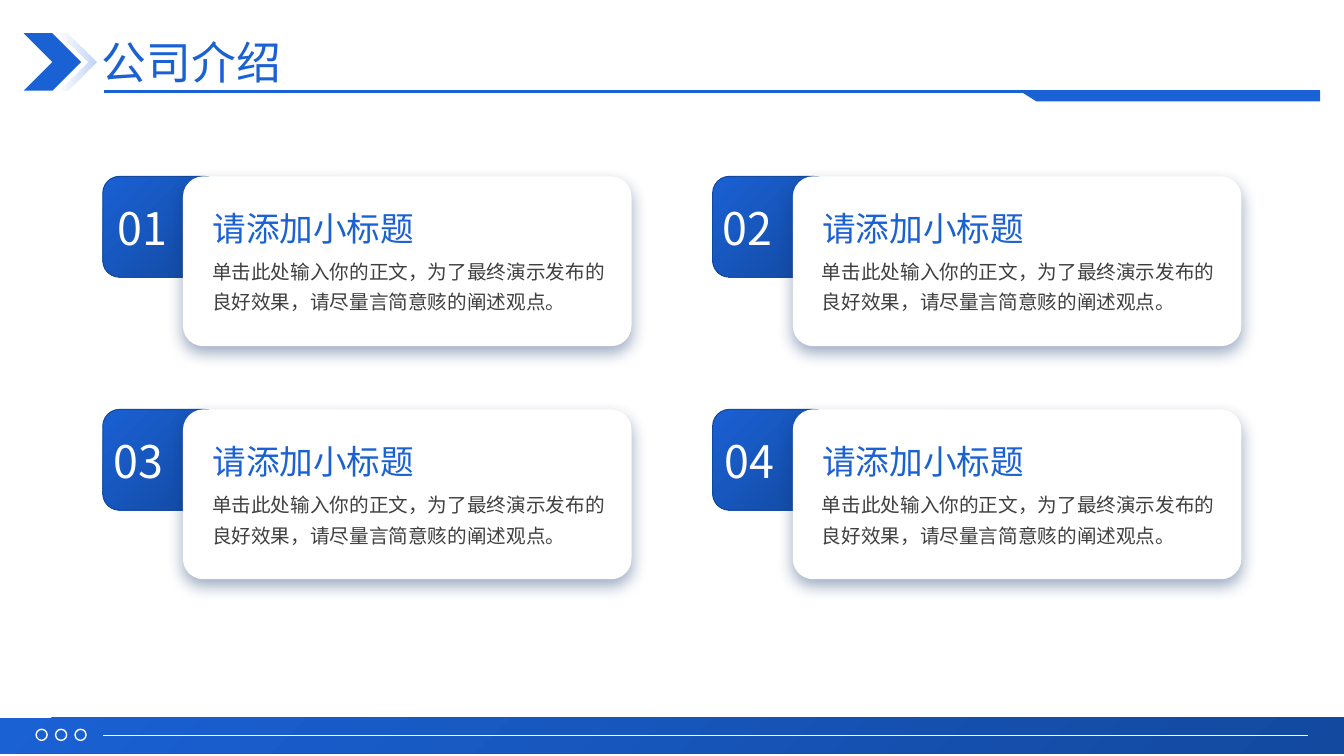
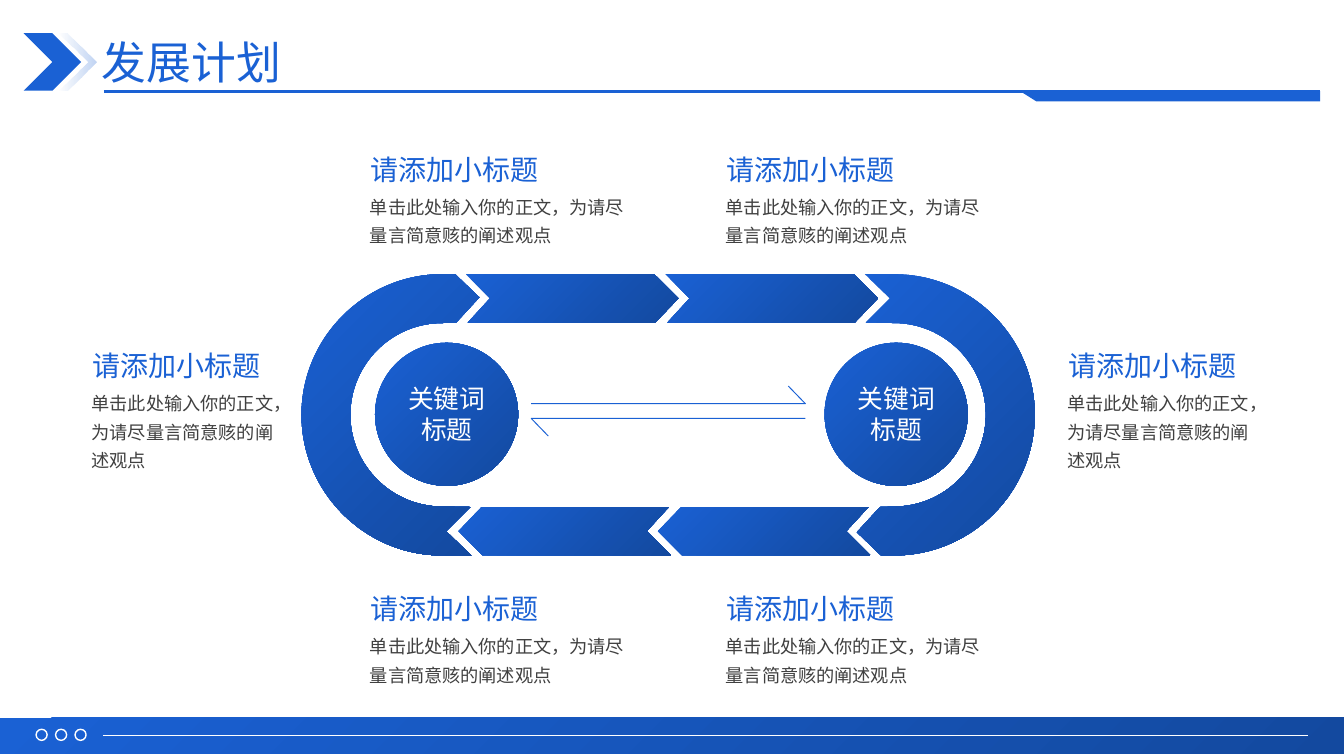
from lxml.etree import SubElement
from pptx import Presentation
from pptx.dml.color import RGBColor
from pptx.enum.shapes import MSO_CONNECTOR, MSO_SHAPE
from pptx.enum.text import MSO_ANCHOR, MSO_AUTO_SIZE, PP_ALIGN
from pptx.oxml.ns import qn
from pptx.util import Inches, Pt

BLUE = RGBColor(0x1A, 0x61, 0xD4)
DEEP_BLUE = RGBColor(0x13, 0x49, 0x9F)
EDGE_BLUE = RGBColor(0x13, 0x48, 0x9D)
SHADOW_BLUE = RGBColor(0x0D, 0x31, 0x6A)
GREY = RGBColor(0x40, 0x40, 0x40)
WHITE = RGBColor(0xFF, 0xFF, 0xFF)
FONT = "Noto Sans CJK SC"

# The slide is a grid of square cells, 133.33 columns by 75 rows.
COLUMNS, ROWS = 133.33, 75
CELL = Inches(0.1)

SUBTITLE = "请添加小标题"
CARD_TEXT = "单击此处输入你的正文，为了最终演示发布的良好效果，请尽量言简意赅的阐述观点。"
NOTE_TEXT = "单击此处输入你的正文，为请尽量言简意赅的阐述观点"


def cells(count):
    return round(count * CELL)


def half_turn(points, center):
    """Rotate the points by 180 degrees about the center."""
    return [(2 * center[0] - x, 2 * center[1] - y) for x, y in points]


def half_circle(center, radius):
    """Start, then two Bezier quarters, from the top by the right to the bottom."""
    pull = 0.55
    unit = [(0, -1), (pull, -1), (1, -pull), (1, 0), (1, pull), (pull, 1), (0, 1)]
    return [(center[0] + radius * x, center[1] + radius * y) for x, y in unit]


class Deck:
    def __init__(self):
        self.presentation = Presentation()
        self.presentation.slide_width = cells(COLUMNS)
        self.presentation.slide_height = cells(ROWS)
        self.slide = None

    def new_slide(self, title):
        """Add a slide with the shared title header and footer band."""
        layout = self.presentation.slide_layouts[6]
        self.slide = self.presentation.slides.add_slide(layout)
        self.header(title)
        self.footer()

    def header(self, title):
        self.shape(MSO_SHAPE.CHEVRON, 2.35, 3.3, 5.7, 5.7, BLUE)
        echo = self.outline(
            [(5.85, 3.3), (6.75, 3.3), (9.55, 6.15), (6.75, 9), (5.85, 9), (8.7, 6.15)])
        self.gradient(echo, BLUE, BLUE, 0)
        colors = echo.element.spPr.iter(qn("a:srgbClr"))
        for color, opacity in zip(colors, (0, 28)):
            SubElement(color, qn("a:alpha"), val=str(opacity * 1000))
        self.line(10.3, 130.95, 9.1, BLUE, 2.25)
        self.outline([(101.2, 9.05), (130.95, 9.05), (130.95, 10.05), (102.8, 10.05)], BLUE)
        self.text([title], 10.1, 3.7, 36.7, 5.5, 32, BLUE, spacing=0.9, anchor=MSO_ANCHOR.MIDDLE)

    def footer(self):
        self.shape(MSO_SHAPE.RECTANGLE, 0, 71.2, COLUMNS, 3.6)
        for index in range(3):
            ring = self.shape(MSO_SHAPE.OVAL, 3.58 + 1.93 * index, 72.35, 1.1, 1.1)
            ring.fill.background()
            ring.line.color.rgb = WHITE
            ring.line.width = Pt(1)
        self.line(10.2, 129.75, 73, WHITE, 0.5)

    def gradient(self, shape, first=BLUE, last=DEEP_BLUE, angle=315):
        shape.fill.gradient()
        shape.fill.gradient_angle = angle
        for stop, color in zip(shape.fill.gradient_stops, (first, last)):
            stop.color.rgb = color

    def paint(self, shape, color):
        """Fill with the color, or with the blue gradient when there is none."""
        shape.shadow.inherit = False
        shape.line.fill.background()
        if color is None:
            self.gradient(shape)
        else:
            shape.fill.solid()
            shape.fill.fore_color.rgb = color
        return shape

    def shape(self, kind, left, top, width, height, color=None):
        shape = self.slide.shapes.add_shape(
            kind, cells(left), cells(top), cells(width), cells(height))
        return self.paint(shape, color)

    def outline(self, points, color=None, close=True, curves=()):
        """Draw a freeform; each curve is the index of the first of three Bezier points."""
        places = [(cells(x), cells(y)) for x, y in points]
        builder = self.slide.shapes.build_freeform(*places[0])
        builder.add_line_segments(places[1:], close=close)
        shape = builder.convert_to_shape()
        steps = [None] + list(shape.element.spPr.iter(qn("a:lnTo")))
        for first in curves:
            curve = steps[first].makeelement(qn("a:cubicBezTo"))
            steps[first].addprevious(curve)
            for step in steps[first:first + 3]:
                curve.append(step[0])
                step.getparent().remove(step)
        return self.paint(shape, color)

    def line(self, left, right, top, color, width):
        connector = self.slide.shapes.add_connector(
            MSO_CONNECTOR.STRAIGHT, cells(left), cells(top), cells(right), cells(top))
        connector.line.color.rgb = color
        connector.line.width = Pt(width)
        SubElement(connector.element.spPr, qn("a:effectLst"))

    def half_arrow(self, points):
        arrow = self.outline(points, close=False)
        arrow.fill.background()
        arrow.line.color.rgb = BLUE
        arrow.line.width = Pt(0.69)

    def text(self, lines, left, top, width, height, size, color, wrap=False,
             spacing=None, align=PP_ALIGN.LEFT, anchor=MSO_ANCHOR.TOP):
        box = self.slide.shapes.add_textbox(
            cells(left), cells(top), cells(width), cells(height))
        frame = box.text_frame
        frame.margin_left = frame.margin_right = frame.margin_top = frame.margin_bottom = 0
        frame.word_wrap = wrap
        frame.auto_size = MSO_AUTO_SIZE.NONE
        frame.vertical_anchor = anchor
        frame.text = "\n".join(lines)
        for paragraph in frame.paragraphs:
            paragraph.alignment = align
            paragraph.line_spacing = spacing
            paragraph.font.size = Pt(size)
            paragraph.font.color.rgb = color
            paragraph.font.name = FONT
            properties = paragraph._p.pPr.find(qn("a:defRPr"))
            SubElement(properties, qn("a:ea"), typeface=FONT)

    def card(self, left, top, number, number_inset):
        tab = self.shape(MSO_SHAPE.ROUNDED_RECTANGLE, left, top, 11.7, 10)
        tab.line.color.rgb = EDGE_BLUE
        tab.line.width = Pt(0)
        panel = self.shape(MSO_SHAPE.ROUNDED_RECTANGLE, left + 7.95, top, 44.5, 16.85, WHITE)
        panel.adjustments[0] = 0.12
        shadow = SubElement(
            panel.element.spPr.find(qn("a:effectLst")), qn("a:outerShdw"),
            blurRad=str(Pt(11.4)), dist=str(Pt(4.8)), dir="5400000", rotWithShape="0")
        color = SubElement(shadow, qn("a:srgbClr"), val=str(SHADOW_BLUE))
        SubElement(color, qn("a:alpha"), val="40000")
        self.text([number], left + number_inset, top + 2.4, 5.8, 5.4, 32, WHITE)
        self.text([SUBTITLE], left + 10.88, top + 3.1, 20.2, 4, 24, BLUE)
        self.text([CARD_TEXT], left + 10.83, top + 7.58, 40.8, 5.9, 14, GREY, True, 1.3)

    def note(self, left, top, width):
        self.text([SUBTITLE], left + 0.07, top, 16.8, 3.4, 20, BLUE)
        self.text([NOTE_TEXT], left, top + 3.7, width, 8.3, 13, GREY, True, 1.3)

    def keyword(self, left):
        self.shape(MSO_SHAPE.OVAL, left, 34, 14.2, 14.2)
        self.text(["关键词", "标题"], left + 3.28, 38, 7.7, 6.2, 18.4, WHITE, align=PP_ALIGN.CENTER)


def company_slide(deck):
    deck.new_slide("公司介绍")
    cards = [("01", 1.5), ("02", 1), ("03", 1.1), ("04", 1.2)]
    for index, (number, inset) in enumerate(cards):
        row, column = divmod(index, 2)
        deck.card(10.2 + 60.5 * column, 17.5 + 23.12 * row, number, inset)


def plan_slide(deck):
    deck.new_slide("发展计划")
    loop_center, arrows_center, cap_center = (66.28, 41.15), (66.3, 40.78), (88.7, 41.15)
    arrow_bands = [
        [(x, 27.2), (x + 18.7, 27.2), (x + 21.1, 29.6), (x + 18.8, 32), (x + 0.2, 32), (x + 2.4, 29.6)]
        for x in (46.2, 66)
    ]
    cap = (
        [(85.8, 27.2)] + half_circle(cap_center, 13.95)
        + [(87.4, 55.1), (85, 52.8), (87.3, 50.3)] + half_circle(cap_center, 9.1)[::-1]
        + [(85.9, 32), (88.3, 29.6)])
    pieces = [(band, ()) for band in arrow_bands] + [(cap, (2, 5, 12, 15))]
    for points, curves in pieces:
        deck.outline(points, curves=curves)
        deck.outline(half_turn(points, loop_center), curves=curves)
    for left in (37.2, 81.8):
        deck.keyword(left)
    half_arrow = [(52.7, 40.05), (79.9, 40.05), (78.2, 38.3)]
    deck.half_arrow(half_arrow)
    deck.half_arrow(half_turn(half_arrow, arrows_center))
    for left in (9.1, 105.9):
        deck.note(left, 34.6, 18.4)
    for top in (15.1, 58.7):
        for left in (36.7, 72):
            deck.note(left, top, 26)


def main():
    deck = Deck()
    company_slide(deck)
    plan_slide(deck)
    deck.presentation.save("out.pptx")


if __name__ == "__main__":
    main()
